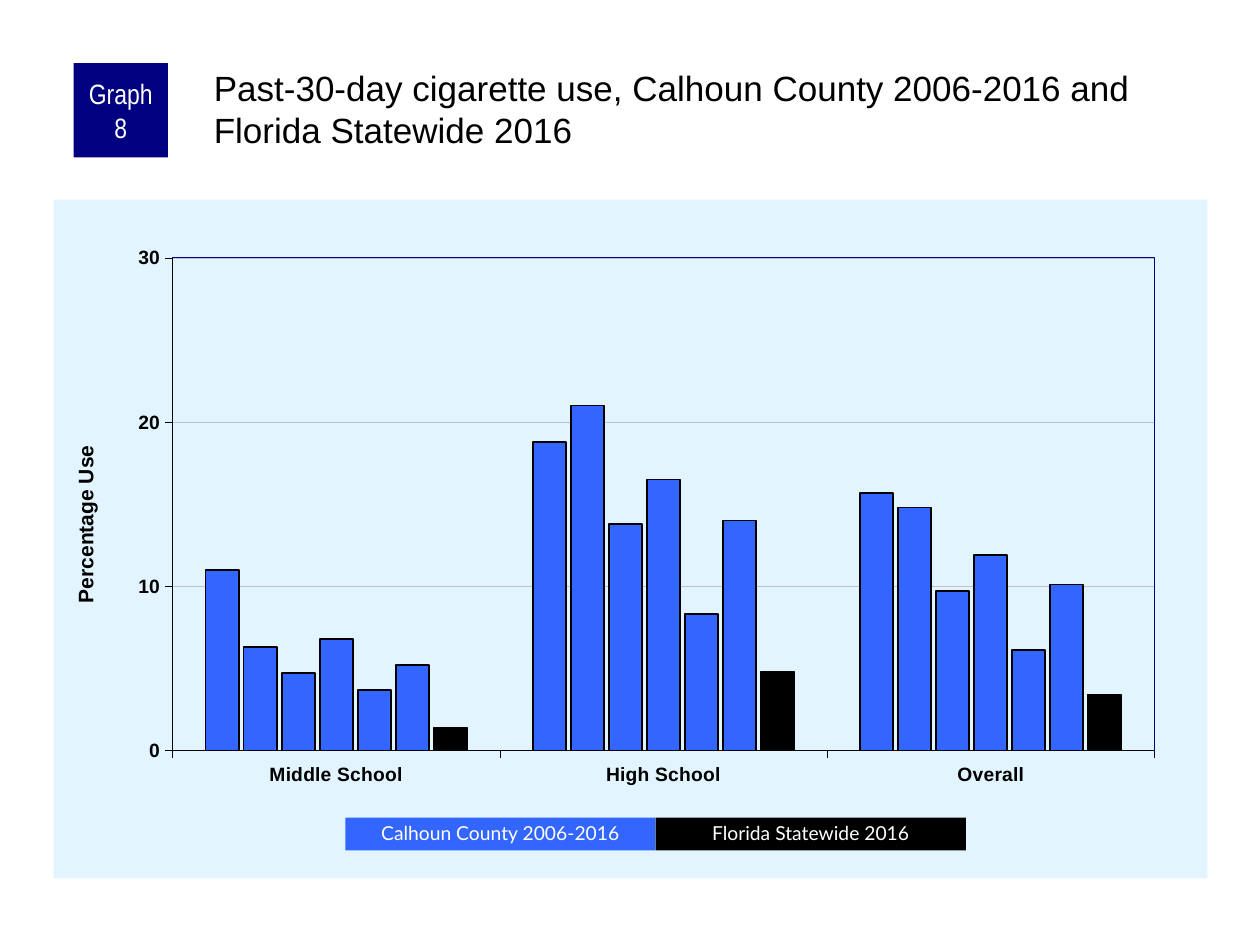
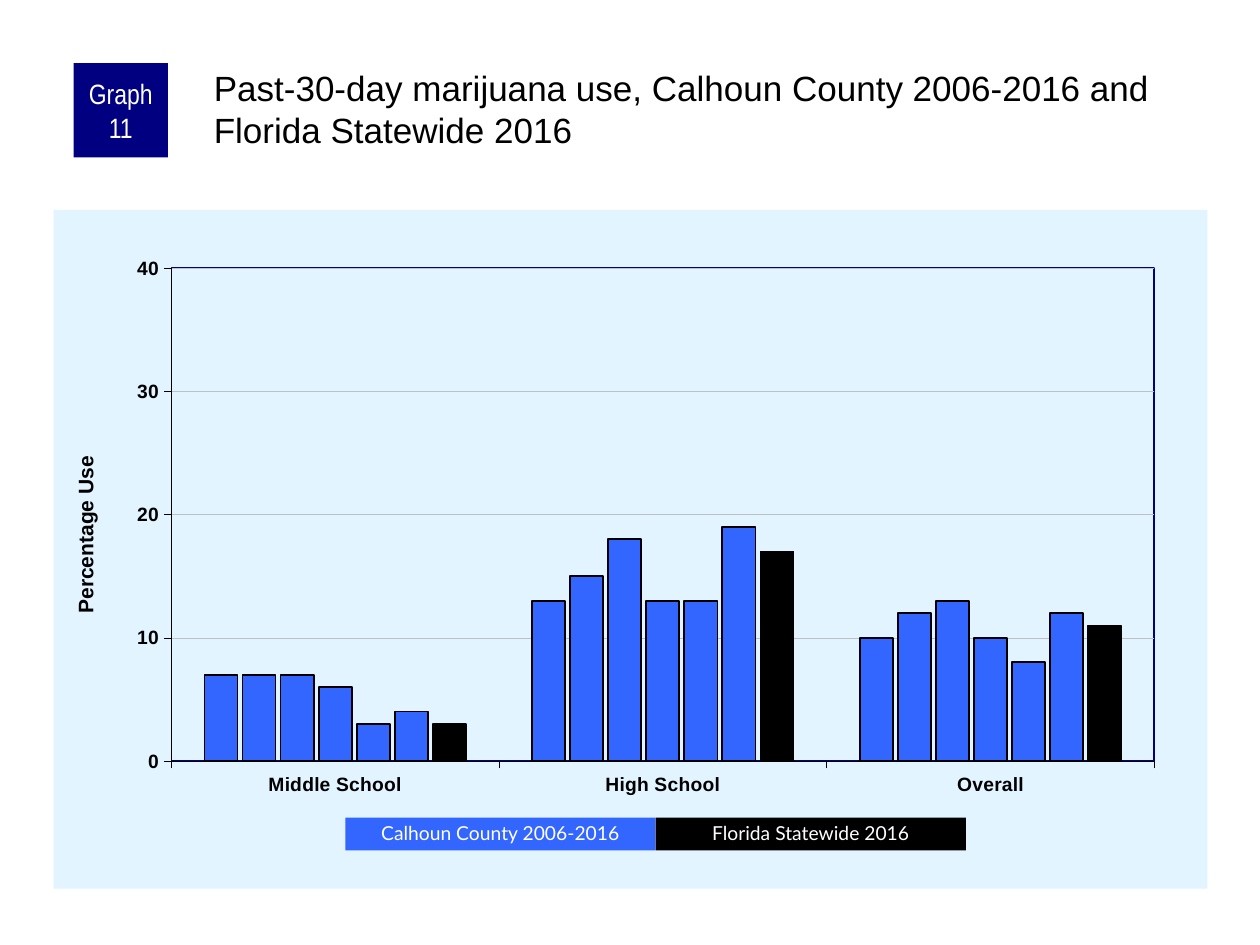
from lxml import etree
from pptx import Presentation
from pptx.chart.data import CategoryChartData
from pptx.dml.color import RGBColor
from pptx.enum.chart import XL_CHART_TYPE, XL_TICK_MARK
from pptx.enum.shapes import MSO_SHAPE
from pptx.enum.text import MSO_ANCHOR, PP_ALIGN
from pptx.oxml import parse_xml
from pptx.oxml.ns import nsdecls, qn
from pptx.util import Pt

CLUSTERED = XL_CHART_TYPE.COLUMN_CLUSTERED
TICK_OUT = XL_TICK_MARK.OUTSIDE
RECTANGLE = MSO_SHAPE.RECTANGLE
MIDDLE, TOP = MSO_ANCHOR.MIDDLE, MSO_ANCHOR.TOP
CENTER, LEFT = PP_ALIGN.CENTER, PP_ALIGN.LEFT

COLORS = {
    "panel": "E1F4FF",
    "navy": "000080",
    "county": "3366FF",
    "state": "000000",
    "ink": "000000",
    "grid": "C0C0C0",
    "light": "FFFFFF",
}
SCHOOL_LEVELS = ["Middle School", "High School", "Overall"]
LEGEND = [("Calhoun County 2006-2016", "county"), ("Florida Statewide 2016", "state")]

BADGE_BOX = (42, 36, 54, 54)
TITLE_BOX = (120, 36, 570, 60)
LEGEND_BOX = (197.3, 467.3, 354.6, 18.7)
CHART_LEFT, CHART_WIDTH, CHART_HEIGHT = 30.7, 659.3, 387.8

GRAPHS = [
    {
        "number": 8, "substance": "cigarette", "chart_top": 114,
        "plot_left": 0.103, "maximum": 30,
        "usage": [
            (11, 18.8, 15.7), (6.3, 21, 14.8), (4.7, 13.8, 9.7), (6.8, 16.5, 11.9),
            (3.7, 8.3, 6.1), (5.2, 14, 10.1), (1.4, 4.8, 3.4),
        ],
    },
    {
        "number": 11, "substance": "marijuana", "chart_top": 120,
        "plot_left": 0.102, "maximum": 40,
        "usage": [
            (7, 13, 10), (7, 15, 12), (7, 18, 13), (6, 13, 10),
            (3, 13, 8), (4, 19, 12), (3, 17, 11),
        ],
    },
]


def rgb(name):
    return RGBColor.from_string(COLORS[name])


def style_font(font, size, color, face="Arial", bold=False):
    font.size = Pt(size)
    font.name = face
    font.bold = bold
    font.color.rgb = rgb(color)


def style_line(line, color, width):
    line.color.rgb = rgb(color)
    line.width = Pt(width)


def write(frame, text, size, color, face, align, anchor, insets, spacing=None):
    frame.word_wrap = True
    frame.vertical_anchor = anchor
    (frame.margin_left, frame.margin_top,
     frame.margin_right, frame.margin_bottom) = [Pt(inset) for inset in insets]
    paragraph = frame.paragraphs[0]
    paragraph.alignment = align
    paragraph.line_spacing = spacing
    run = paragraph.add_run()
    run.text = text
    style_font(run.font, size, color, face)


def add_block(slide, box, fill, text, size, face, insets, spacing=None):
    block = slide.shapes.add_shape(RECTANGLE, *[Pt(length) for length in box])
    block.shadow.inherit = False
    block.fill.solid()
    block.fill.fore_color.rgb = rgb(fill)
    block.line.fill.background()
    write(block.text_frame, text, size, "light", face, CENTER, MIDDLE, insets, spacing)


def set_layout(parent, index, places, inner=False):
    layout = parent.find(qn("c:layout"))
    if layout is None:
        layout = parse_xml(f"<c:layout {nsdecls('c')}/>")
        parent.insert(index, layout)
    manual = etree.SubElement(layout, qn("c:manualLayout"))
    settings = [("layoutTarget", "inner")] if inner else []
    settings += [("xMode", "edge"), ("yMode", "edge"), *places.items()]
    for tag, value in settings:
        etree.SubElement(manual, qn(f"c:{tag}")).set("val", str(value))


def add_usage_chart(slide, box, graph):
    usage = CategoryChartData()
    usage.categories = SCHOOL_LEVELS
    for position, values in enumerate(graph["usage"], 1):
        usage.add_series(f"Series {position}", values)
    chart = slide.shapes.add_chart(
        CLUSTERED, *[Pt(length) for length in box], usage).chart
    chart.has_legend = False
    chart.has_title = False
    style_font(chart.font, 8, "ink")

    columns = chart.plots[0]
    columns.vary_by_categories = False
    columns.gap_width = 200
    columns.overlap = -15
    statewide = len(graph["usage"]) - 1
    for position, series in enumerate(columns.series):
        series.format.fill.solid()
        series.format.fill.fore_color.rgb = rgb("state" if position == statewide else "county")
        style_line(series.format.line, "ink", 1)

    for axis in (chart.category_axis, chart.value_axis):
        axis.major_tick_mark = TICK_OUT
        style_font(axis.tick_labels.font, 11, "ink", bold=True)
        style_line(axis.format.line, "ink", 0.25)
    percentage = chart.value_axis
    percentage.minimum_scale = 0
    percentage.maximum_scale = graph["maximum"]
    percentage.major_unit = 10
    style_line(percentage.major_gridlines.format.line, "grid", 0.25)

    heading = percentage.axis_title
    run = heading.text_frame.paragraphs[0].add_run()
    run.text = "Percentage Use"
    style_font(run.font, 12, "ink", bold=True)
    direction = heading._element.find(f".//{qn('a:bodyPr')}")
    direction.set("rot", "-5400000")
    direction.set("vert", "horz")
    set_layout(heading._element, 1, {"x": 0.013, "y": 0.357})

    space = chart._chartSpace
    chart_part = space.find(qn("c:chart"))
    chart_part.addnext(parse_xml(
        f"<c:spPr {nsdecls('c', 'a')}><a:solidFill><a:srgbClr val=\"{COLORS['panel']}\"/>"
        "</a:solidFill><a:ln><a:noFill/></a:ln></c:spPr>"))
    plot_area = chart_part.find(qn("c:plotArea"))
    left = graph["plot_left"]
    set_layout(plot_area, 0, {
        "x": left, "y": 0.086, "w": round(0.954 - left, 3), "h": 0.726}, inner=True)
    plot_area.append(parse_xml(
        f"<c:spPr {nsdecls('c', 'a')}><a:noFill/><a:ln w=\"{Pt(1)}\"><a:solidFill>"
        f"<a:srgbClr val=\"{COLORS['navy']}\"/></a:solidFill></a:ln></c:spPr>"))


def add_header(slide, badge_box, title_box, graph):
    add_block(slide, badge_box, "navy", f"Graph {graph['number']}", 16,
              "Arial Narrow", (3.6, 0, 3.6, 0))
    title = slide.shapes.add_textbox(*[Pt(length) for length in title_box])
    text = (f"Past-30-day {graph['substance']} use, Calhoun County 2006-2016 "
            "and Florida Statewide 2016")
    write(title.text_frame, text, 20, "ink", "Arial", LEFT, TOP, (2.2, 2.2, 0, 0))


def add_legend(slide, box):
    left, top, width, height = box
    key_width = width / len(LEGEND)
    for position, (label, fill) in enumerate(LEGEND):
        key_box = (left + position * key_width, top, key_width, height)
        add_block(slide, key_box, fill, label, 11, "Lato", (7.2, 3.6, 7.2, 3.6), 0.9)


def add_graph_slide(deck, graph):
    slide = deck.slides.add_slide(deck.slide_layouts[6])
    add_usage_chart(slide, (CHART_LEFT, graph["chart_top"], CHART_WIDTH, CHART_HEIGHT), graph)
    add_header(slide, BADGE_BOX, TITLE_BOX, graph)
    add_legend(slide, LEGEND_BOX)


def main():
    deck = Presentation()
    deck.slide_width, deck.slide_height = Pt(720), Pt(540)
    for graph in GRAPHS:
        add_graph_slide(deck, graph)
    deck.save("out.pptx")


if __name__ == "__main__":
    main()
